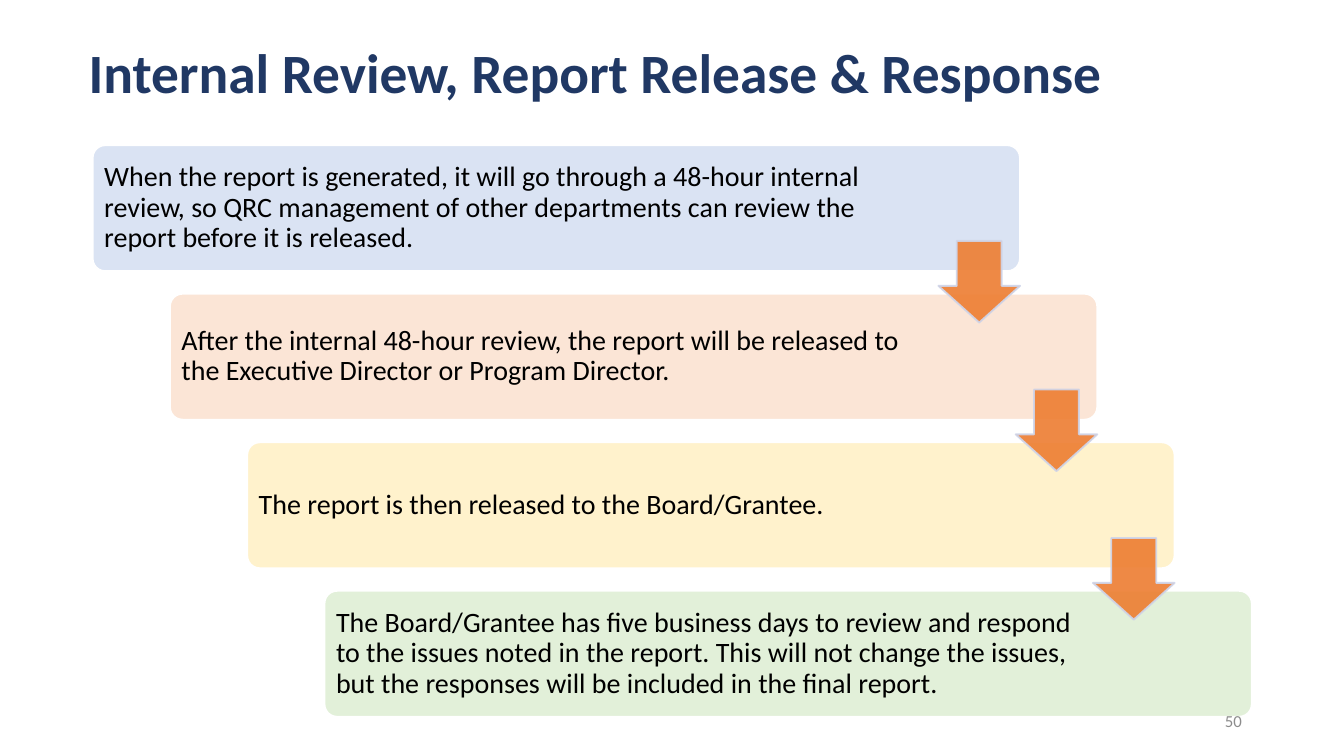
from dataclasses import dataclass

from lxml import etree
from pptx import Presentation
from pptx import util as u
from pptx.dml.color import RGBColor
from pptx.enum import shapes, text
from pptx.oxml import ns


@dataclass(frozen=True)
class Theme:
    font: str = "Calibri"
    title: str = "203864"
    body: str = "000000"
    page_number: str = "8C8C8C"
    card_line: str = "FFFFFF"
    arrow: str = "ED7D31"
    arrow_line: str = "CFD5EA"
    arrow_opacity: int = 90
    title_size: float = 39.6
    body_size: float = 20
    page_number_size: float = 12
    line_width: float = 1.35


@dataclass(frozen=True)
class Box:
    left: float
    top: float
    width: float
    height: float

    def shifted(self, right: float, down: float):
        return Box(self.left + right, self.top + down, self.width, self.height)

    def lengths(self) -> list:
        return [u.Pt(value) for value in (self.left, self.top, self.width, self.height)]


@dataclass(frozen=True)
class Step:
    wording: str
    fill: str
    text_width: float = 543.6


THEME = Theme()
TITLE = Box(56.2, 28.8, 828, 50.4)
PAGE_NUMBER = Box(678.2, 500.4, 216, 28.8)
FIRST_CARD = Box(66.2, 103.7, 662.4, 90)
FIRST_ARROW = Box(670.3, 172.1, 58.3, 58.3)
STEP_RIGHT, STEP_DOWN = 55.2, 106.1
CARD_INSET = 2.6
TEXT_MARGIN = 5.6

STEPS = [
    Step("When the report is generated, it will go through a 48-hour internal review, "
         "so QRC management of other departments can review the report before it "
         "is released.", "DAE3F3", 558),
    Step("After the internal 48-hour review, the report will be released "
         "to the Executive Director or Program Director.", "FBE5D6"),
    Step("The report is then released to the Board/Grantee.", "FFF2CC"),
    Step("The Board/Grantee has five business days to review and respond to the issues "
         "noted in the report. This will not change the issues, but the responses will "
         "be included in the final report.", "E2F0D9"),
]


def add_text(slide, box: Box, wording: str, size: float, color: str, bold: bool = False,
             align=text.PP_ALIGN.LEFT, margin: float | None = None,
             line_spacing: float = 0.9) -> None:
    frame = slide.shapes.add_textbox(*box.lengths()).text_frame
    frame.word_wrap = True
    frame.vertical_anchor = text.MSO_ANCHOR.MIDDLE
    if margin is not None:
        frame.margin_left = frame.margin_right = u.Pt(margin)
        frame.margin_top = frame.margin_bottom = u.Pt(margin)
    frame.text = wording
    paragraph = frame.paragraphs[0]
    paragraph.alignment = align
    paragraph.line_spacing = line_spacing
    font = paragraph.runs[0].font
    font.name = THEME.font
    font.size = u.Pt(size)
    font.bold = bold
    font.color.rgb = RGBColor.from_string(color)


def add_preset(slide, kind, box: Box, adjustments: list[float], fill: str, line: str):
    shape = slide.shapes.add_shape(kind, *box.lengths())
    shape.shadow.inherit = False
    for index, value in enumerate(adjustments):
        shape.adjustments[index] = value
    shape.fill.solid()
    shape.fill.fore_color.rgb = RGBColor.from_string(fill)
    shape.line.color.rgb = RGBColor.from_string(line)
    shape.line.width = u.Pt(THEME.line_width)
    return shape


def set_opacity(shape, percent: int) -> None:
    """Apply the opacity to both the fill and the outline."""
    for color in shape.element.spPr.iter(ns.qn("a:srgbClr")):
        etree.SubElement(color, ns.qn("a:alpha")).set("val", str(percent * 1000))


def add_card(slide, step: Step, box: Box) -> None:
    add_preset(slide, shapes.MSO_SHAPE.ROUNDED_RECTANGLE, box, [0.1],
               step.fill, THEME.card_line)
    text_box = Box(box.left + CARD_INSET, box.top + CARD_INSET,
                   step.text_width, box.height - 2 * CARD_INSET)
    add_text(slide, text_box, step.wording, THEME.body_size, THEME.body,
             margin=TEXT_MARGIN)


def add_arrow(slide, box: Box) -> None:
    arrow = add_preset(slide, shapes.MSO_SHAPE.DOWN_ARROW, box, [0.55, 0.45],
                       THEME.arrow, THEME.arrow_line)
    # The preset lists the head length first and the shaft width second.
    arrow.adjustments[0], arrow.adjustments[1] = 0.55, 0.45
    set_opacity(arrow, THEME.arrow_opacity)


def main() -> None:
    presentation = Presentation()
    presentation.slide_width, presentation.slide_height = u.Pt(960), u.Pt(540)
    slide = presentation.slides.add_slide(presentation.slide_layouts[6])

    add_text(slide, TITLE, "Internal Review, Report Release & Response",
             THEME.title_size, THEME.title, bold=True)
    for index, step in enumerate(STEPS):
        add_card(slide, step, FIRST_CARD.shifted(index * STEP_RIGHT, index * STEP_DOWN))
    for index in range(len(STEPS) - 1):
        add_arrow(slide, FIRST_ARROW.shifted(index * STEP_RIGHT, index * STEP_DOWN))
    add_text(slide, PAGE_NUMBER, "50", THEME.page_number_size, THEME.page_number,
             align=text.PP_ALIGN.RIGHT, line_spacing=1.0)

    presentation.save("out.pptx")


if __name__ == "__main__":
    main()
